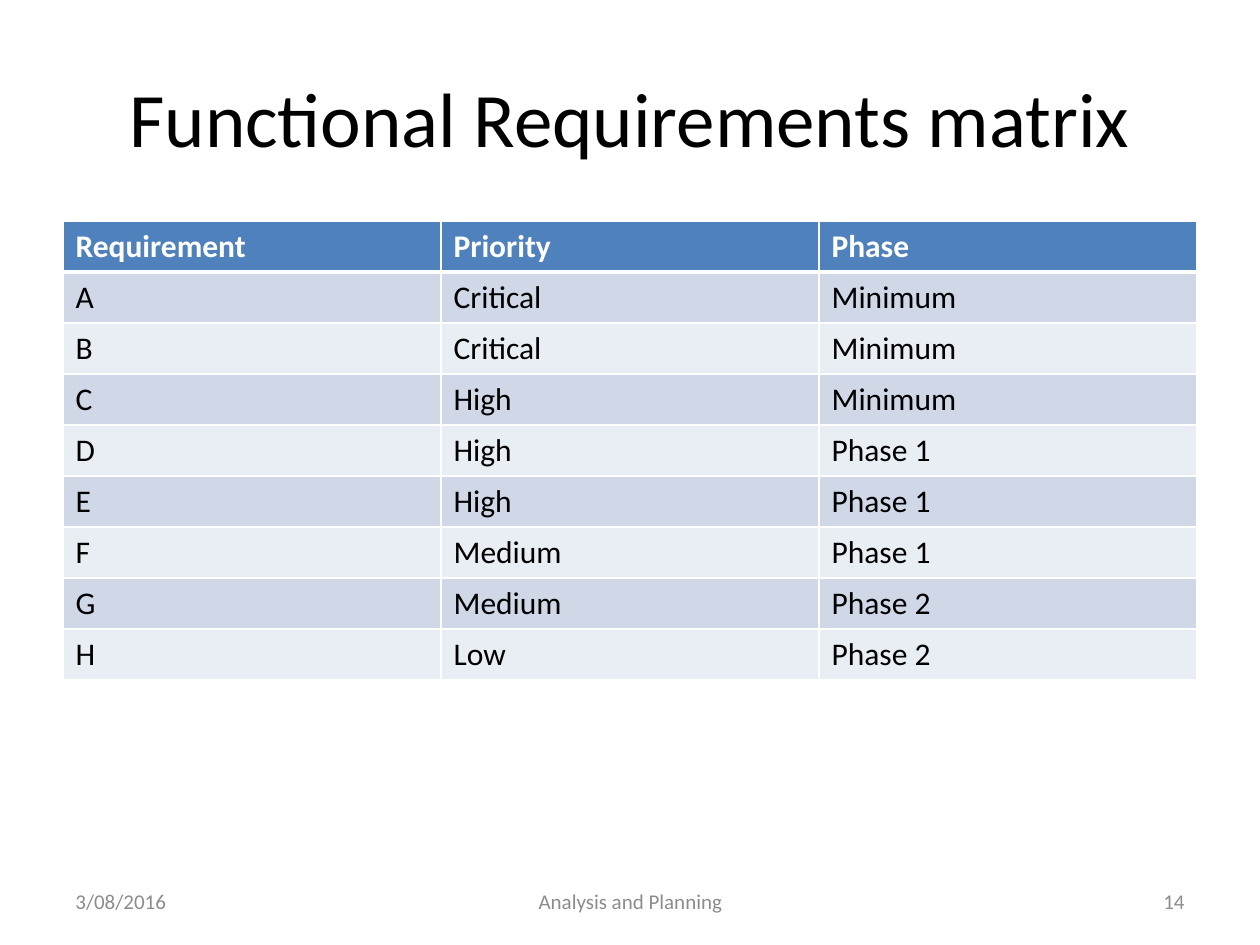
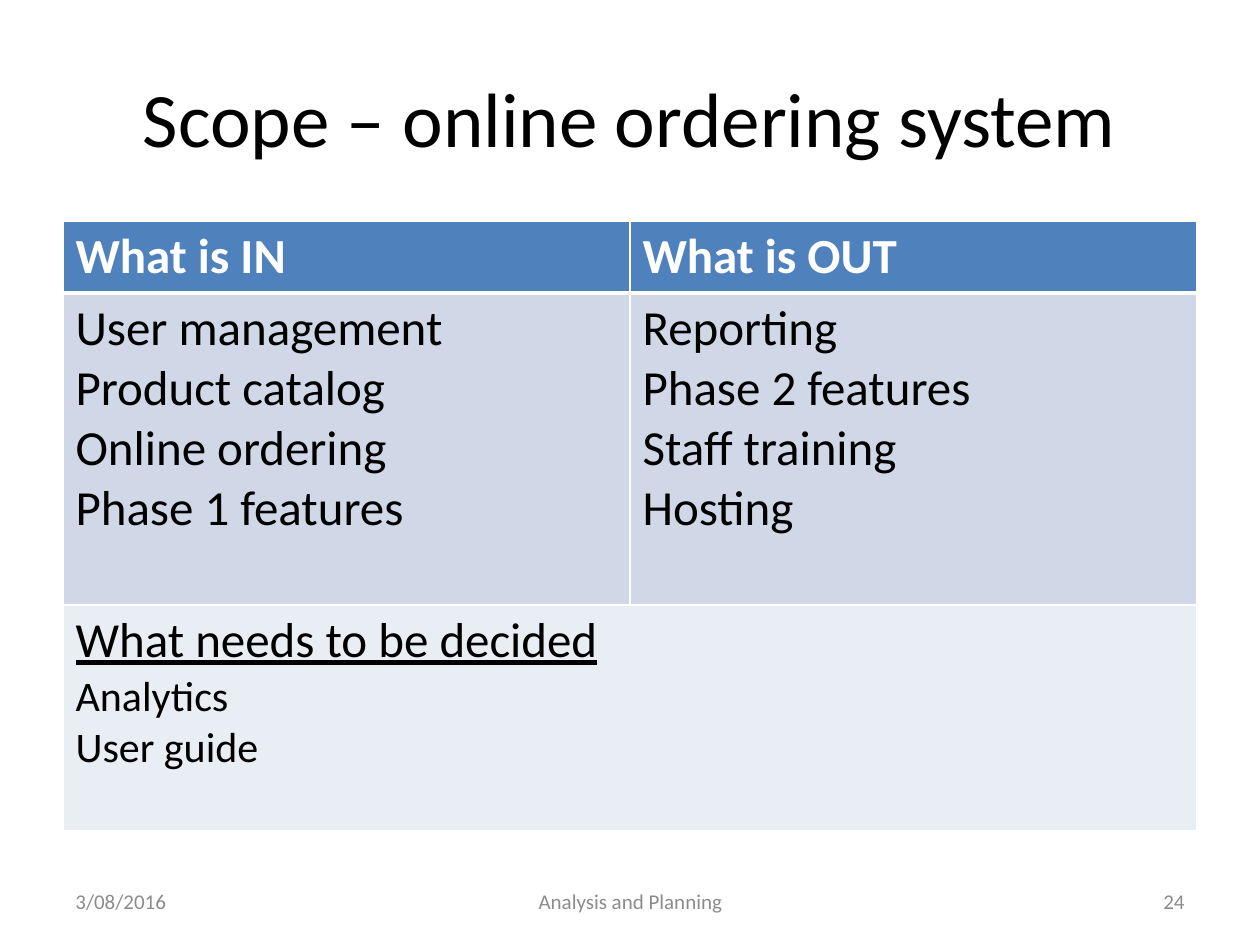
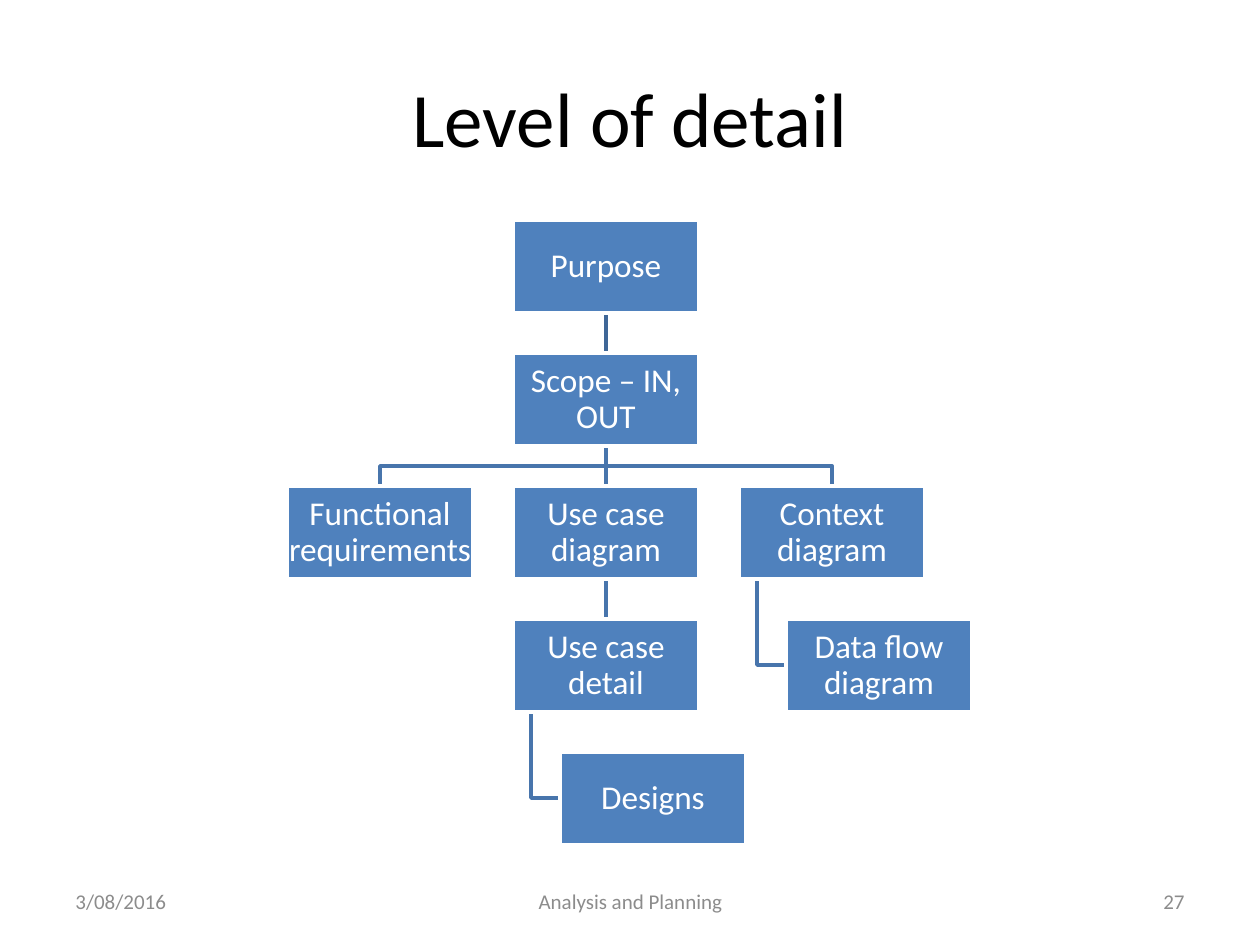
from dataclasses import dataclass

from lxml.etree import SubElement
from pptx import Presentation
from pptx.dml.color import RGBColor
from pptx.enum.shapes import MSO_CONNECTOR, MSO_SHAPE
from pptx.enum.text import MSO_ANCHOR, PP_ALIGN
from pptx.oxml.ns import qn
from pptx.util import Emu, Pt

FONT = "Calibri"
COLORS = {
    "ink": "000000",
    "white": "FFFFFF",
    "blue": "4F81BD",
    "odd": "D0D8E8",
    "even": "E9EDF4",
    "gray": "8C8C8C",
    "line": "4875AC",
    "root": "3F6797",
}
EDGE = 63
FULL = 1134
TOP = 221
BOX_W, BOX_H = 186, 93
COL_GAP, ROW_GAP = 226, 133
TREE_X, TREE_Y = 287, 220
STEM = 18


@dataclass(frozen=True)
class Style:
    size: int
    color: str = "ink"
    bold: bool = False
    under: bool = False


@dataclass(frozen=True)
class Label:
    left: int
    top: int
    width: int
    height: int
    align: PP_ALIGN
    style: Style


@dataclass(frozen=True)
class Line:
    text: str
    style: Style


@dataclass(frozen=True)
class Node:
    text: str
    col: int
    row: int
    shift: int = 0

    @property
    def left(self) -> int:
        return TREE_X + self.col * COL_GAP + self.shift

    @property
    def top(self) -> int:
        return TREE_Y + self.row * ROW_GAP

    @property
    def mid(self) -> int:
        return self.left + BOX_W // 2

    @property
    def base(self) -> int:
        return self.top + BOX_H


SMALL = Style(12, "gray")
TITLE = Label(EDGE, 38, FULL, 157, PP_ALIGN.CENTER, Style(44))
DATE = Label(EDGE, 876, 294, 50, PP_ALIGN.LEFT, SMALL)
PAGE = Label(903, 876, 294, 50, PP_ALIGN.RIGHT, SMALL)
TOPIC = Label(431, 876, 399, 50, PP_ALIGN.CENTER, SMALL)

MATRIX = [
    ("Requirement", "Priority", "Phase"),
    ("A", "Critical", "Minimum"),
    ("B", "Critical", "Minimum"),
    ("C", "High", "Minimum"),
    ("D", "High", "Phase 1"),
    ("E", "High", "Phase 1"),
    ("F", "Medium", "Phase 1"),
    ("G", "Medium", "Phase 2"),
    ("H", "Low", "Phase 2"),
]
INSIDE = ["User management", "Product catalog", "Online ordering", "Phase 1 features"]
OUTSIDE = ["Reporting", "Phase 2 features", "Staff training", "Hosting"]

NODES = {
    "purpose": Node("Purpose", 1, 0),
    "scope": Node("Scope – IN, OUT", 1, 1),
    "needs": Node("Functional requirements", 0, 2),
    "case": Node("Use case diagram", 1, 2),
    "detail": Node("Use case detail", 1, 3),
    "design": Node("Designs", 1, 4, 47),
    "context": Node("Context diagram", 2, 2),
    "flow": Node("Data flow diagram", 2, 3, 47),
}
DOWN = [("purpose", "scope", "root"), ("scope", "case", "line"), ("case", "detail", "line")]
FORK = [("scope", "needs"), ("scope", "context")]
HANG = [("detail", "design"), ("context", "flow")]


def px(count: int) -> Emu:
    return Emu(round(count * 914400 / 126))


def paint(name: str) -> RGBColor:
    return RGBColor.from_string(COLORS[name])


def add_run(para, text: str, style: Style) -> None:
    run = para.add_run()
    run.text = text
    font = run.font
    font.name = FONT
    font.size = Pt(style.size)
    font.bold = style.bold
    font.underline = style.under
    font.color.rgb = paint(style.color)


def add_label(slide, label: Label, text: str) -> None:
    box = slide.shapes.add_textbox(
        px(label.left), px(label.top), px(label.width), px(label.height)
    )
    frame = box.text_frame
    frame.word_wrap = True
    frame.vertical_anchor = MSO_ANCHOR.MIDDLE
    para = frame.paragraphs[0]
    para.alignment = label.align
    add_run(para, text, label.style)


def add_page(deck, title: str, number: int):
    """Add a blank slide with the shared title and footer."""
    slide = deck.slides.add_slide(deck.slide_layouts[6])
    add_label(slide, TITLE, title)
    add_label(slide, DATE, "3/08/2016")
    add_label(slide, PAGE, str(number))
    add_label(slide, TOPIC, "Analysis and Planning")
    return slide


def add_edges(cell, row: int) -> None:
    """Draw white cell borders, thick below the header row."""
    widths = {"lnL": 1, "lnR": 1, "lnT": 1, "lnB": 1 if row else 3}
    if row:
        del widths["lnT"]
    props = cell._tc.get_or_add_tcPr()
    for tag, width in widths.items():
        edge = SubElement(props, qn(f"a:{tag}"), w=str(Pt(width)))
        fill = SubElement(edge, qn("a:solidFill"))
        SubElement(fill, qn("a:srgbClr"), val=COLORS["white"])


def fill_cell(cell, lines: list[Line], row: int) -> None:
    add_edges(cell, row)
    cell.fill.solid()
    cell.fill.fore_color.rgb = paint(("even", "odd")[row % 2] if row else "blue")
    frame = cell.text_frame
    for spot, line in enumerate(lines):
        para = frame.add_paragraph() if spot else frame.paragraphs[0]
        add_run(para, line.text, line.style)


def add_grid(slide, rows: list[list[list[Line]]], heights: list[int]):
    count = len(rows[0])
    frame = slide.shapes.add_table(
        len(rows), count, px(EDGE), px(TOP), px(FULL), px(sum(heights))
    )
    table = frame.table
    for col in table.columns:
        col.width = px(FULL // count)
    for spot, (cells, height) in enumerate(zip(rows, heights)):
        table.rows[spot].height = px(height)
        for col, lines in enumerate(cells):
            fill_cell(table.cell(spot, col), lines, spot)
    return table


def add_matrix(deck) -> None:
    slide = add_page(deck, "Functional Requirements matrix", 14)
    head, body = Style(18, "white", bold=True), Style(18)
    rows = [
        [[Line(text, body if spot else head)] for text in row]
        for spot, row in enumerate(MATRIX)
    ]
    add_grid(slide, rows, [51] * len(rows))


def add_scope(deck) -> None:
    slide = add_page(deck, "Scope – online ordering system", 24)
    head, body, small = Style(28, "white", bold=True), Style(28), Style(24)
    open_items = [Line("What needs to be decided", Style(28, under=True))]
    open_items += [Line(text, small) for text in ("Analytics", "User guide")]
    rows = [
        [[Line("What is IN", head)], [Line("What is OUT", head)]],
        [[Line(text, body) for text in side] for side in (INSIDE, OUTSIDE)],
        [open_items, []],
    ]
    table = add_grid(slide, rows, [72, 312, 226])
    table.cell(2, 0).merge(table.cell(2, 1))


def set_line(shape, color: str) -> None:
    shape.line.color.rgb = paint(color)
    shape.line.width = Pt(2)


def add_bend(slide, points: list[tuple[int, int]]) -> None:
    start, *rest = [(px(x), px(y)) for x, y in points]
    pen = slide.shapes.build_freeform(*start)
    pen.add_line_segments(rest, close=False)
    shape = pen.convert_to_shape()
    shape.shadow.inherit = False
    shape.fill.background()
    set_line(shape, "line")


def add_link(slide, color: str):
    link = slide.shapes.add_connector(MSO_CONNECTOR.STRAIGHT, 0, 0, 0, 0)
    set_line(link, color)
    SubElement(link._element.spPr, qn("a:effectLst"))
    return link


def add_node(slide, node: Node):
    box = slide.shapes.add_shape(
        MSO_SHAPE.RECTANGLE, px(node.left), px(node.top), px(BOX_W), px(BOX_H)
    )
    box.shadow.inherit = False
    box.fill.solid()
    box.fill.fore_color.rgb = paint("blue")
    set_line(box, "white")
    frame = box.text_frame
    frame.word_wrap = True
    frame.vertical_anchor = MSO_ANCHOR.MIDDLE
    frame.margin_left = frame.margin_right = px(1)
    frame.margin_top = frame.margin_bottom = px(1)
    para = frame.paragraphs[0]
    para.alignment = PP_ALIGN.CENTER
    para.line_spacing = 0.9
    add_run(para, node.text, Style(19, "white"))
    return box


def add_tree(deck) -> None:
    """Draw lines below the boxes, then join the straight ones to them."""
    slide = add_page(deck, "Level of detail", 27)
    for upper, lower in HANG:
        top, end = NODES[upper], NODES[lower]
        stem, level = top.left + STEM, end.top + BOX_H // 2
        add_bend(slide, [(stem, top.base), (stem, level), (end.left, level)])
    for upper, lower in FORK:
        top, end = NODES[upper], NODES[lower]
        level = (top.base + end.top) // 2
        add_bend(
            slide,
            [(top.mid, top.base), (top.mid, level), (end.mid, level), (end.mid, end.top)],
        )
    links = [add_link(slide, color) for _, _, color in DOWN]
    boxes = {name: add_node(slide, node) for name, node in NODES.items()}
    for link, (upper, lower, _) in zip(links, DOWN):
        link.begin_connect(boxes[upper], 2)
        link.end_connect(boxes[lower], 0)


def main() -> None:
    deck = Presentation()
    deck.slide_width, deck.slide_height = px(1260), px(945)
    add_matrix(deck)
    add_scope(deck)
    add_tree(deck)
    deck.save("out.pptx")


if __name__ == "__main__":
    main()
